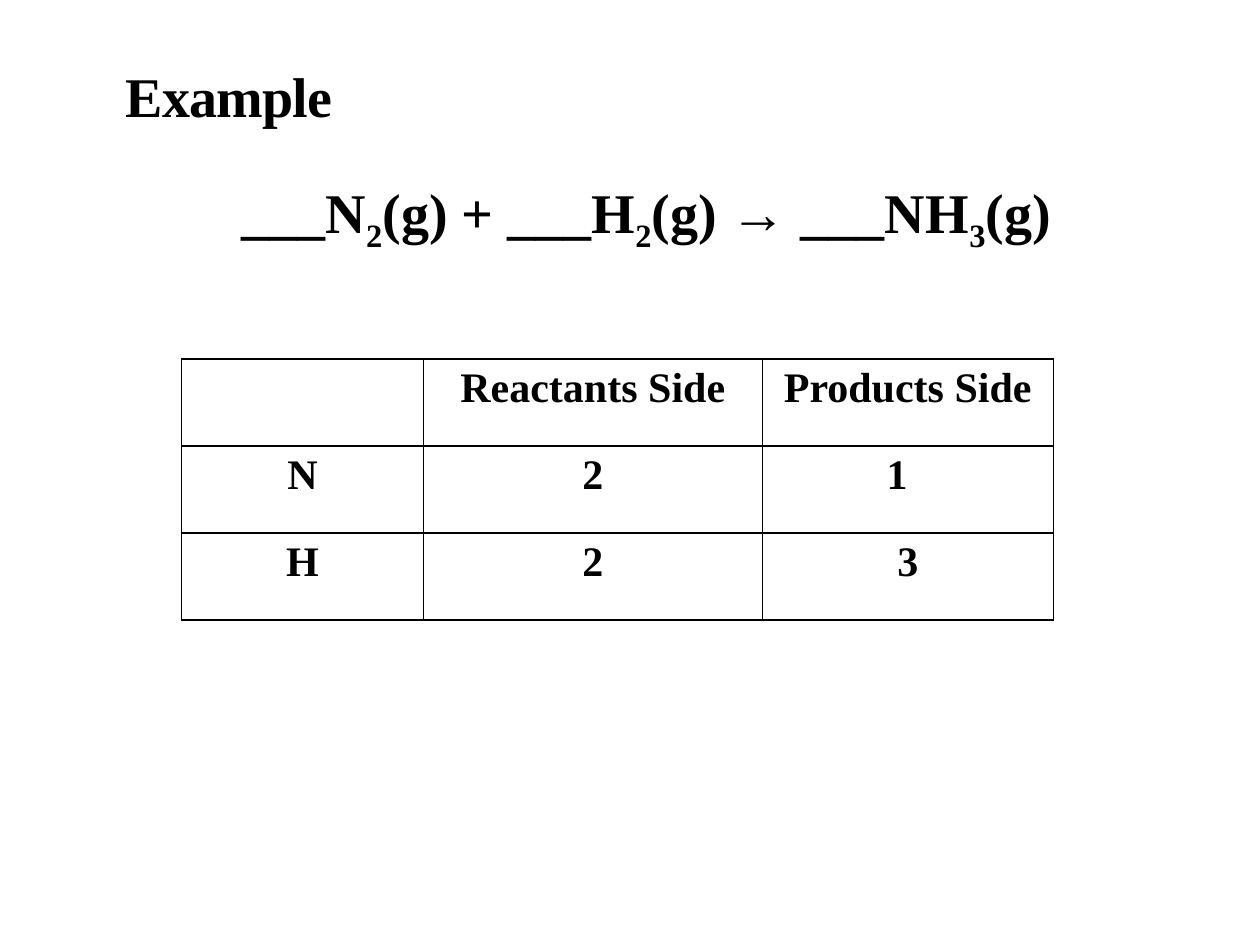
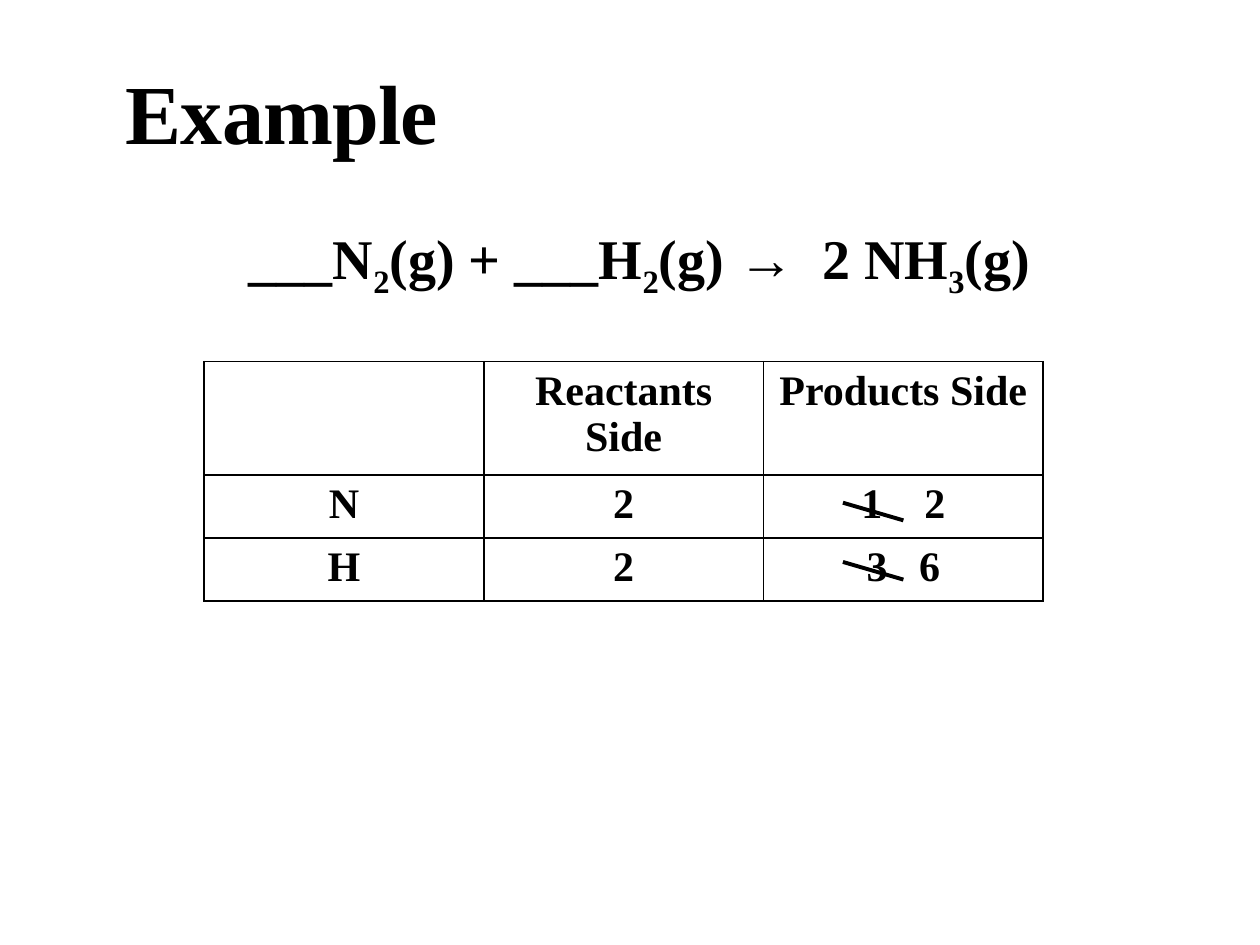
from lxml import etree
from pptx import Presentation
from pptx.dml.color import RGBColor
from pptx.enum.shapes import MSO_CONNECTOR
from pptx.enum.text import MSO_ANCHOR, PP_ALIGN
from pptx.oxml.ns import qn
from pptx.util import Inches, Pt

STRAIGHT = MSO_CONNECTOR.STRAIGHT
BOTTOM, TOP = MSO_ANCHOR.BOTTOM, MSO_ANCHOR.TOP
LEFT, CENTER = PP_ALIGN.LEFT, PP_ALIGN.CENTER

FONT = "Times New Roman"
INK, PAPER = "000000", "FFFFFF"
HEADER = ["", "Reactants Side", "Products Side"]


def color(hex_string):
    return RGBColor.from_string(hex_string)


def subscript(text):
    return text, {"baseline": "-25000"}


def wide_space(extra_points):
    """One space widened by character spacing."""
    return " ", {"spc": str(extra_points * 100)}


def ammonia_equation(*product_start):
    return ["___N", subscript("2"), "(g) + ___H", subscript("2"), "(g) →",
            *product_start, "NH", subscript("3"), "(g)"]


class SlideBuilder:
    def __init__(self):
        self.deck = Presentation()
        self.deck.slide_width, self.deck.slide_height = Inches(10), Inches(7.5)
        self.page = None

    def new_page(self):
        self.page = self.deck.slides.add_slide(self.deck.slide_layouts[6])
        self.page.background.fill.solid()
        self.page.background.fill.fore_color.rgb = color(PAPER)

    def set_spans(self, para, spans, size, align):
        """Fill a paragraph from strings and (text, run attributes) pairs."""
        para.alignment = align
        para.font.name, para.font.size, para.font.bold = FONT, Pt(size), True
        para.font.color.rgb = color(INK)
        for item in spans:
            text, attributes = (item, {}) if isinstance(item, str) else item
            span = para.add_run()
            span.text = text
            for name, value in attributes.items():
                span.font._element.set(name, value)

    def text_box(self, left, top, width, height, anchor):
        box = self.page.shapes.add_textbox(
            Inches(left), Inches(top), Inches(width), Inches(height))
        frame = box.text_frame
        frame.word_wrap, frame.vertical_anchor = True, anchor
        return frame

    def title(self, text, size, height):
        frame = self.text_box(0.9, 0.31, 8.25, height, BOTTOM)
        para = frame.paragraphs[0]
        para.line_spacing = 0.85
        self.set_spans(para, [(text, {"spc": "-50"})], size, LEFT)

    def equation(self, spans, left, top, width, height):
        frame = self.text_box(left, top, width, height, TOP)
        frame.margin_left, frame.margin_right = Inches(0.1), 0
        para = frame.paragraphs[0]
        para.line_spacing = 0.9
        self.set_spans(para, spans, 32, CENTER)

    def border(self, cell):
        properties = cell._tc.get_or_add_tcPr()
        for side in ("lnL", "lnR", "lnT", "lnB"):
            line = etree.SubElement(properties, qn(f"a:{side}"), w=str(Pt(1)))
            fill = etree.SubElement(line, qn("a:solidFill"))
            etree.SubElement(fill, qn("a:srgbClr"), val=INK)

    def atom_table(self, left, top, column_widths, row_heights, counts):
        """Draw the atom counts; each cell is a string or a list of spans."""
        rows = [HEADER, *counts]
        table = self.page.shapes.add_table(
            len(rows), len(HEADER), Inches(left), Inches(top),
            Inches(sum(column_widths)), Inches(sum(row_heights))).table
        table.first_row = table.horz_banding = False
        for column, width in zip(table.columns, column_widths):
            column.width = Inches(width)
        for row, height, contents in zip(table.rows, row_heights, rows):
            row.height = Inches(height)
            for cell, content in zip(row.cells, contents):
                self.border(cell)
                cell.fill.solid()
                cell.fill.fore_color.rgb = color(PAPER)
                spans = [content] if isinstance(content, str) else content
                self.set_spans(cell.text_frame.paragraphs[0],
                               [span for span in spans if span], 24, CENTER)
        return table

    def strike(self, left, top, width, height):
        line = self.page.shapes.add_connector(
            STRAIGHT, Inches(left), Inches(top),
            Inches(left + width), Inches(top + height))
        line.line.color.rgb = color(INK)
        line.line.width = Pt(2.25)
        etree.SubElement(line._element.spPr, qn("a:effectLst"))


def unbalanced_slide(builder):
    builder.new_page()
    builder.title("Example", 32, 0.76)
    builder.equation(ammonia_equation(" ___"), 0.8, 1.37, 8.56, 5.39)
    table = builder.atom_table(1.44, 2.85, [1.92, 2.69, 2.31], [0.69] * 3,
                               [["N", "2", "1"], ["H", "2", "3"]])
    table.cell(1, 2).margin_right = Inches(0.27)


def product_balanced_slide(builder):
    row_height = 0.47
    builder.new_page()
    builder.title("Example", 48, 1.02)
    builder.equation(ammonia_equation(wide_space(8), "2 "),
                     0.9, 1.73, 8.25, 4.69)
    builder.atom_table(1.62, 2.87, [2.22] * 3, [0.83, row_height, row_height],
                       [["N", "2", ["1", wide_space(18), "2"]],
                        ["H", "2", ["3", wide_space(12), "6"]]])
    for row in range(2):
        builder.strike(6.69, 3.99 + row * row_height, 0.48, 0.14)


def main():
    builder = SlideBuilder()
    unbalanced_slide(builder)
    product_balanced_slide(builder)
    builder.deck.save("out.pptx")


if __name__ == "__main__":
    main()
